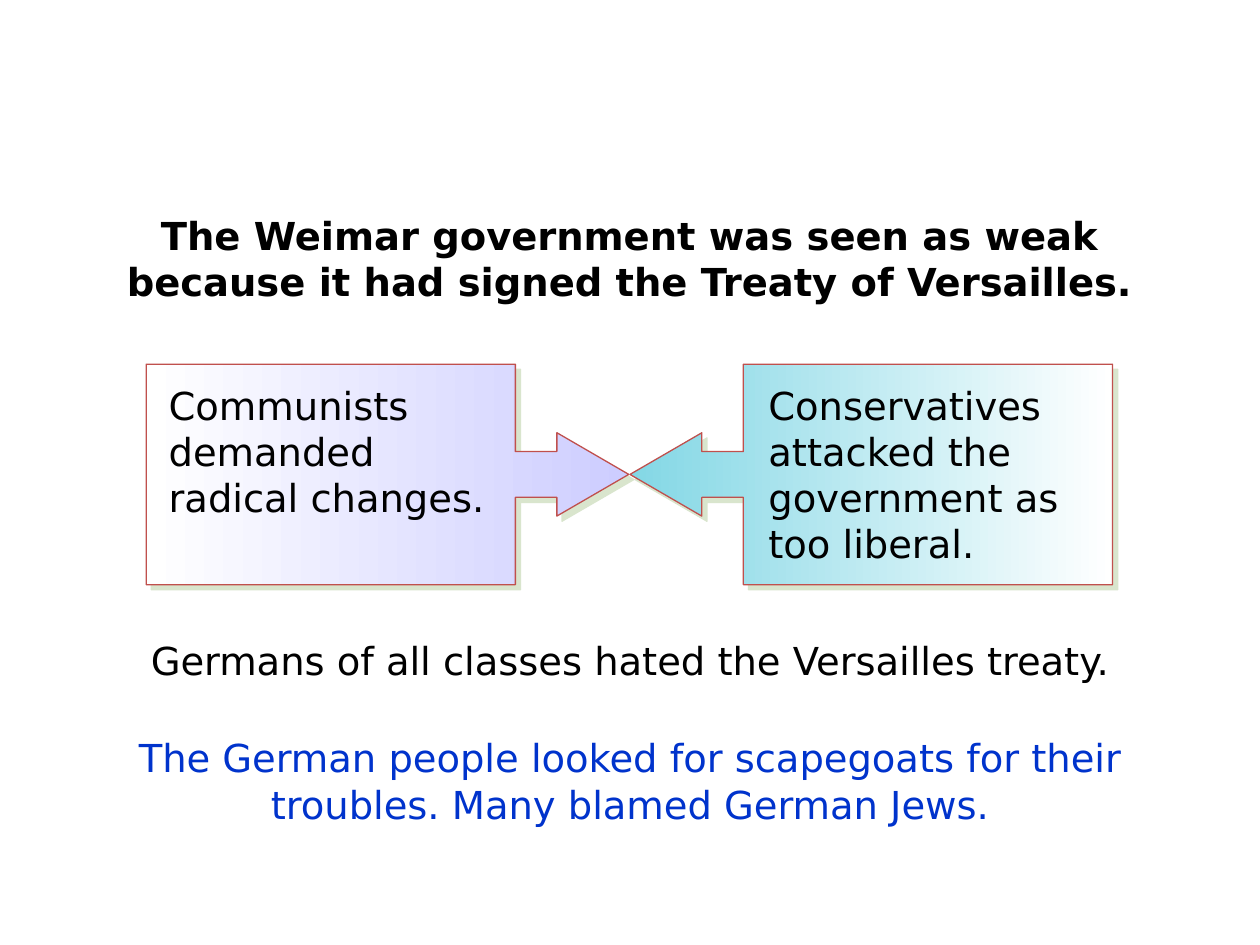
"""Build a slide on the pressures facing the Weimar government."""
from dataclasses import dataclass

from lxml import etree
from pptx import Presentation
from pptx import util as u
from pptx.dml.color import RGBColor
from pptx.enum import shapes, text
from pptx.oxml import parse_xml

DRAWING_NS = "http://schemas.openxmlformats.org/drawingml/2006/main"
SHADOW = f"""<a:effectLst xmlns:a="{DRAWING_NS}">
<a:outerShdw dist="53340" dir="2700000" algn="ctr" rotWithShape="0">
<a:srgbClr val="ADC793"><a:alpha val="46000"/></a:srgbClr>
</a:outerShdw></a:effectLst>"""
CALLOUT_ADJUSTMENTS = (0.208, 0.189, 0.326, 0.765)


@dataclass
class Callout:
    left: float
    rotation: int
    tip_color: str


@dataclass
class Statement:
    left: float
    top: float
    width: float
    height: float
    wording: str
    color: str = "000000"
    bold: bool = False
    align: text.PP_ALIGN = text.PP_ALIGN.CENTER


CALLOUTS = [Callout(2.2, 90, "CDCDFF"), Callout(6.04, 270, "83D7E5")]

STATEMENTS = [
    Statement(0.58, 1.63, 8.83, 1.05,
              "The Weimar government was seen as weak because it had signed "
              "the Treaty of Versailles.", bold=True),
    Statement(1.24, 2.98, 3.25, 1.2,
              "Communists demanded \vradical changes.", align=text.PP_ALIGN.LEFT),
    Statement(6, 2.98, 2.92, 1.57,
              "Conservatives attacked the government as too liberal.",
              align=text.PP_ALIGN.LEFT),
    Statement(0.5, 5.01, 9, 0.47,
              "Germans of all classes hated the Versailles treaty."),
    Statement(0.5, 5.78, 9, 0.84,
              "The German people looked for scapegoats for their troubles. "
              "Many blamed German Jews.", color="0033CC"),
]


def paint(color, value: str) -> None:
    """Set a colour from a hex string."""
    color.rgb = RGBColor.from_string(value)


def draw_callout(page, callout: Callout) -> None:
    """Draw a turned arrow callout that fades away from its tip."""
    shape = page.shapes.add_shape(
        shapes.MSO_SHAPE.UP_ARROW_CALLOUT, u.Inches(callout.left),
        u.Inches(1.85), u.Inches(1.75), u.Inches(3.83))
    shape.rotation = callout.rotation
    for index, value in enumerate(CALLOUT_ADJUSTMENTS):
        shape.adjustments[index] = value
    shape.fill.gradient()
    shape.fill.gradient_angle = 270
    for stop, value in zip(shape.fill.gradient_stops, (callout.tip_color, "FFFFFF")):
        paint(stop.color, value)
    paint(shape.line.color, "C0504D")
    shape.line.width = u.Pt(0.75)
    shape.element.spPr.append(parse_xml(etree.tostring(etree.fromstring(SHADOW))))


def write_statement(page, statement: Statement) -> None:
    """Write one wrapped statement in its text box."""
    box = page.shapes.add_textbox(*map(u.Inches, (
        statement.left, statement.top, statement.width, statement.height)))
    frame = box.text_frame
    frame.word_wrap = True
    frame.auto_size = text.MSO_AUTO_SIZE.SHAPE_TO_FIT_TEXT
    para = frame.paragraphs[0]
    para.text = statement.wording
    para.alignment = statement.align
    styles = {"name": "DejaVu Sans", "size": u.Pt(22), "bold": statement.bold}
    for span in para.runs:
        for attribute, value in styles.items():
            setattr(span.font, attribute, value)
        paint(span.font.color, statement.color)


def main() -> None:
    """Assemble and save the deck."""
    deck = Presentation()
    deck.slide_width, deck.slide_height = u.Inches(10), u.Inches(7.5)
    page = deck.slides.add_slide(deck.slide_layouts[6])
    for callout in CALLOUTS:
        draw_callout(page, callout)
    for statement in STATEMENTS:
        write_statement(page, statement)
    deck.save("out.pptx")


if __name__ == "__main__":
    main()
